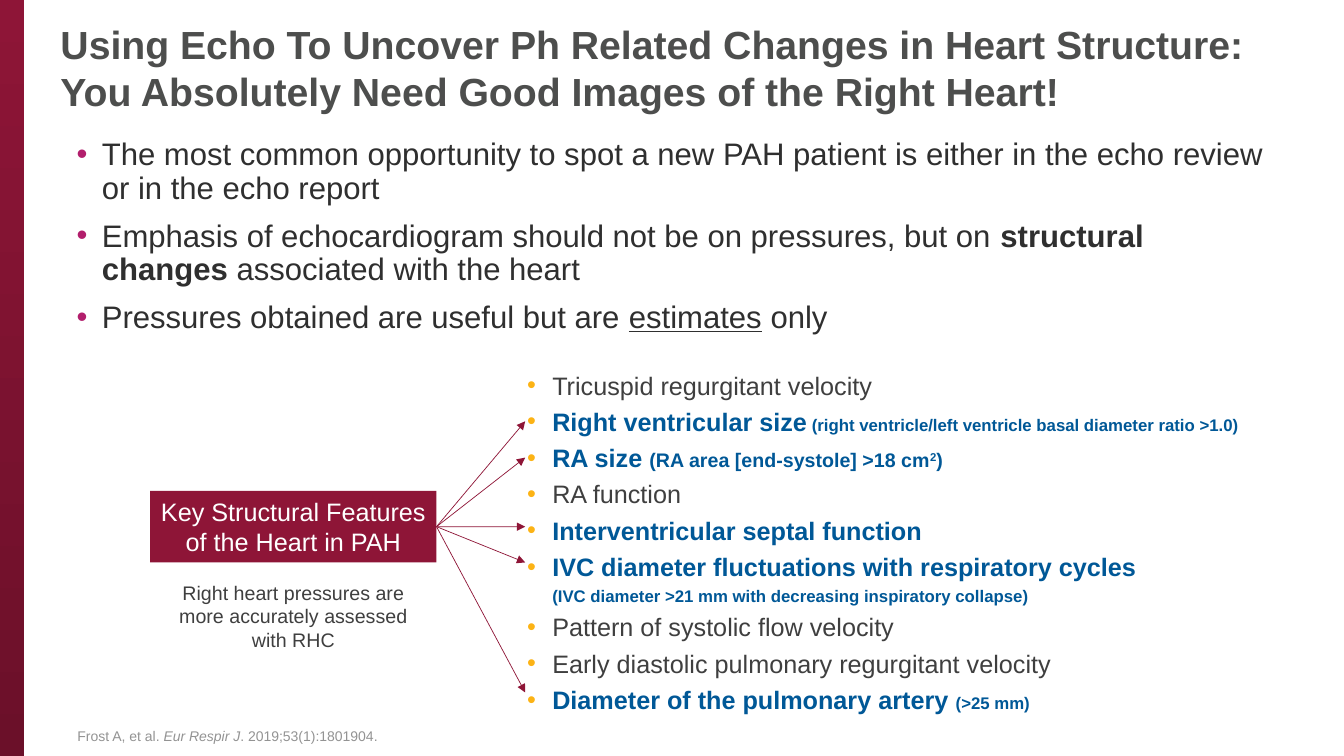
from lxml.etree import SubElement
from pptx import Presentation
from pptx.dml.color import RGBColor
from pptx.enum.shapes import MSO_CONNECTOR, MSO_SHAPE
from pptx.enum.text import MSO_ANCHOR, MSO_AUTO_SIZE, PP_ALIGN
from pptx.oxml.ns import qn
from pptx.util import Inches, Pt

COLORS = {
    "crimson": "8E1537", "maroon": "6B1029", "title": "4D4E4D", "body": "2F2F2F",
    "magenta": "B21E6C", "amber": "FCB315", "text": "3F3F3F", "blue": "005897",
    "white": "FFFFFF", "grey": "939393",
}
RGB = {name: RGBColor.from_string(value) for name, value in COLORS.items()}

deck = Presentation()
deck.slide_width, deck.slide_height = Inches(13.33), Inches(7.5)
slide = deck.slides.add_slide(deck.slide_layouts[1])
shapes = slide.shapes
COL, ROW = deck.slide_width / 100, deck.slide_height / 100


def place(left, top, width, height):
    return [int(n) for n in (left * COL, top * ROW, width * COL, height * ROW)]


def write(paragraph, pieces, size, color, align=PP_ALIGN.LEFT, spacing=1.0, before=0, bullet=None):
    settings = {"alignment": align, "line_spacing": spacing, "space_before": Pt(before)}
    for key, value in settings.items():
        setattr(paragraph, key, value)
    if bullet:
        props = paragraph._p.get_or_add_pPr()
        props.set("marL", str(Inches(0.25)))
        props.set("indent", str(Inches(-0.25)))
        SubElement(SubElement(props, qn("a:buClr")), qn("a:srgbClr"), val=COLORS[bullet])
        SubElement(props, qn("a:buFont"), typeface="Arial")
        SubElement(props, qn("a:buChar"), char="•")
    for words, changes in pieces:
        if words == "\n":
            paragraph.add_line_break()
            continue
        run = paragraph.add_run()
        run.text = words
        look = {"name": "Arial", "size": Pt(size), "bold": False, **changes}
        raised = look.pop("raised", None)
        for key, value in look.items():
            setattr(run.font, key, value)
        run.font.color.rgb = RGB[color]
        if raised:
            run._r.get_or_add_rPr().set("baseline", raised)


BOLD = {"bold": True}
SMALL = {"bold": True, "size": Pt(12)}
MEDIUM = {"bold": True, "size": Pt(14)}

side_bar = shapes.add_shape(MSO_SHAPE.RECTANGLE, *place(0, 0, 1.8, 100))
side_bar.shadow.inherit = False
side_bar.line.fill.background()
side_bar.fill.gradient()
side_bar.fill.gradient_angle = 270
for stop, position, shade in zip(side_bar.fill.gradient_stops, (0, 1), ("crimson", "maroon")):
    stop.position = position
    stop.color.rgb = RGB[shade]

heading, messages = shapes.title, slide.placeholders[1]
features = shapes.add_textbox(*place(38.48, 47.47, 54.61, 49.47))
key_features = shapes.add_shape(MSO_SHAPE.RECTANGLE, *place(11.18, 64.93, 21.3, 9.47))
rhc_note = shapes.add_textbox(*place(11.18, 76.13, 21.3, 10.8))
citation = shapes.add_textbox(*place(5.03, 92.67, 88.15, 6.4))

for holder, area in ((heading, (3.75, 1.2, 90.17, 15.33)), (messages, (4.95, 17.73, 90.17, 28.4))):
    holder.left, holder.top, holder.width, holder.height = place(*area)

for block, anchor in (
    (heading, MSO_ANCHOR.MIDDLE), (messages, MSO_ANCHOR.TOP), (features, MSO_ANCHOR.TOP),
    (key_features, MSO_ANCHOR.MIDDLE), (rhc_note, MSO_ANCHOR.TOP), (citation, MSO_ANCHOR.BOTTOM),
):
    frame = {"word_wrap": True, "auto_size": MSO_AUTO_SIZE.NONE, "vertical_anchor": anchor}
    for key, value in frame.items():
        setattr(block.text_frame, key, value)

write(heading.text_frame.paragraphs[0], [
    ("Using Echo To Uncover Ph Related Changes in Heart Structure:", BOLD),
    ("\n", {}),
    ("You Absolutely Need Good Images of the Right Heart!", BOLD),
], 28, "title")

message_lines = [
    [("The most common opportunity to spot a new PAH patient is either in the echo review "
      "or in the echo report", {})],
    [("Emphasis of echocardiogram should not be on pressures, but on ", {}),
     ("structural changes", BOLD), (" associated with the heart", {})],
    [("Pressures obtained are useful but are ", {}),
     ("estimates", {"underline": True}), (" only", {})],
]
for number, pieces in enumerate(message_lines):
    text = messages.text_frame
    line = text.add_paragraph() if number else text.paragraphs[0]
    write(line, pieces, 22.2, "body", spacing=0.9, before=10, bullet="magenta")

feature_lines = [
    ("text", [("Tricuspid regurgitant velocity", {})]),
    ("blue", [("Right ventricular size", BOLD),
              (" (right ventricle/left ventricle basal diameter ratio >1.0)", SMALL)]),
    ("blue", [("RA size ", BOLD), ("(RA area [end-systole] >18 cm", MEDIUM),
              ("2", {**MEDIUM, "raised": "30000"}), (")", MEDIUM)]),
    ("text", [("RA function", {})]),
    ("blue", [("Interventricular septal function", BOLD)]),
    ("blue", [("IVC diameter fluctuations with respiratory cycles ", BOLD), ("\n", {}),
              ("(IVC diameter >21 mm with decreasing inspiratory collapse)", SMALL)]),
    ("text", [("Pattern of systolic flow velocity", {})]),
    ("text", [("Early diastolic pulmonary regurgitant velocity", {})]),
    ("blue", [("Diameter of the pulmonary artery ", BOLD), ("(>25 mm)", SMALL)]),
]
for number, (color, pieces) in enumerate(feature_lines):
    text = features.text_frame
    line = text.add_paragraph() if number else text.paragraphs[0]
    write(line, pieces, 18, color, spacing=1.2, bullet="amber")

key_features.shadow.inherit = False
key_features.fill.solid()
key_features.fill.fore_color.rgb = RGB["crimson"]
key_features.line.fill.background()
key_features.text_frame.margin_left = key_features.text_frame.margin_right = Inches(0.05)
write(key_features.text_frame.paragraphs[0],
      [("Key Structural Features of the Heart in PAH", {})], 18, "white", PP_ALIGN.CENTER)

for target in (55.73, 60.53, 69.67, 74.4, 91.6):
    arrow = shapes.add_connector(MSO_CONNECTOR.STRAIGHT, *place(32.48, 69.67, 39.08, target))
    arrow.begin_connect(key_features, 3)
    arrow.line.color.rgb = RGB["crimson"]
    arrow.line.width = Pt(0.5)
    outline = arrow._element.spPr
    SubElement(outline.find(qn("a:ln")), qn("a:tailEnd"), type="triangle")
    SubElement(outline, qn("a:effectLst"))

write(rhc_note.text_frame.paragraphs[0],
      [("Right heart pressures are more accurately assessed with RHC", {})],
      14, "text", PP_ALIGN.CENTER)
write(citation.text_frame.paragraphs[0], [
    ("Frost A, et al. ", {}),
    ("Eur Respir J", {"italic": True}),
    (". 2019;53(1):1801904.", {}),
], 10, "grey")

deck.save("out.pptx")
